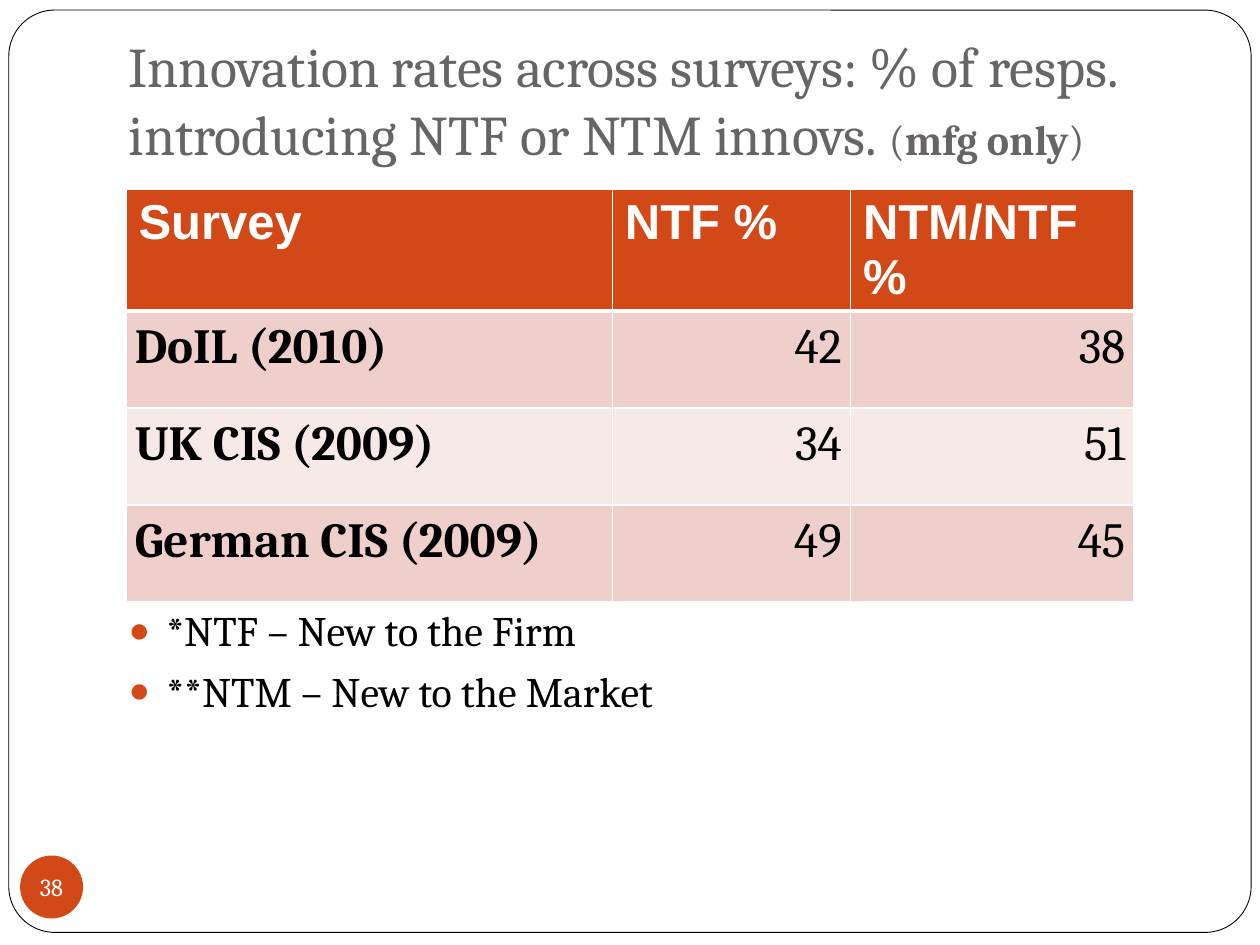
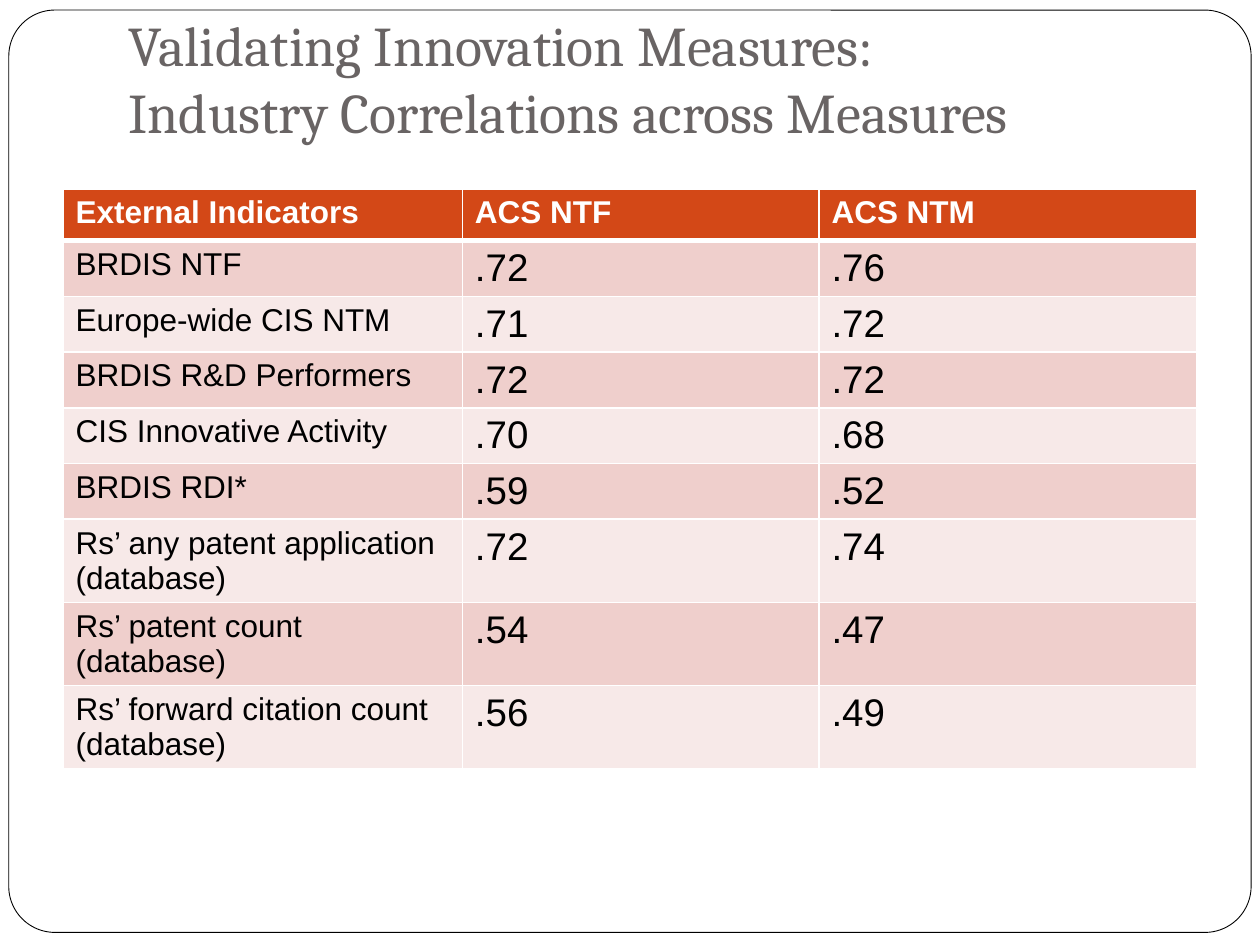
import pptx
import pptx.util
import pptx.dml.color
import pptx.enum.shapes
import pptx.enum.text
import pptx.oxml
import pptx.oxml.ns

Inches, Pt = pptx.util.Inches, pptx.util.Pt
ALIGN, ANCHOR = pptx.enum.text.PP_ALIGN, pptx.enum.text.MSO_ANCHOR
SHAPE = pptx.enum.shapes.MSO_SHAPE

COLORS = {
    "paper": "FFFFFF", "ink": "000000", "title": "696464",
    "accent": "D34817", "band_dark": "EFCFCC", "band_light": "F7E9E8",
}
SERIF, SANS = "Cambria", "Arial"
TITLE_FONT = {"name": SERIF, "size": Pt(32), "color": "title"}
FRAME_INSETS = {
    "margin_left": Inches(0.1), "margin_right": Inches(0.1),
    "margin_top": Inches(0.05), "margin_bottom": Inches(0.1),
    "vertical_anchor": ANCHOR.BOTTOM, "word_wrap": True,
    "auto_size": pptx.enum.text.MSO_AUTO_SIZE.NONE,
}


# Formatting helpers
def rgb(color):
    return pptx.dml.color.RGBColor.from_string(COLORS[color])


def apply_format(target, values):
    for attribute, value in values.items():
        if attribute == "color":
            target.color.rgb = rgb(value)
        else:
            setattr(target, attribute, value)


def place(shape, left, top, width, height):
    box = {"left": left, "top": top, "width": width, "height": height}
    apply_format(shape, {side: Inches(value) for side, value in box.items()})


def fill_solid(target, color):
    target.fill.solid()
    target.fill.fore_color.rgb = rgb(color)


def add_xml(parent, xml, index):
    namespace = pptx.oxml.ns.nsdecls("a")
    element = pptx.oxml.parse_xml(xml.replace(" ", f" {namespace} ", 1))
    parent.insert(index, element)


# Parts shared by the slides
def add_page_frame(slide):
    frame = slide.shapes.add_shape(
        SHAPE.ROUNDED_RECTANGLE, *map(Inches, (0.07, 0.08, 9.86, 7.32)))
    frame.adjustments[0] = 0.05
    frame.shadow.inherit = False
    fill_solid(frame, "paper")
    apply_format(frame.line, {"color": "ink", "width": Pt(0.5)})
    slide.shapes._spTree.insert(2, frame._element)  # behind the text


def add_title(slide, box, runs):
    title = slide.shapes.title
    place(title, *box)
    apply_format(title.text_frame, FRAME_INSETS)
    paragraph = title.text_frame.paragraphs[0]
    paragraph.alignment = ALIGN.LEFT
    for text, changes in runs:
        # A vertical tab becomes a line break inside the paragraph
        for number, line in enumerate(text.split("\v")):
            if number:
                paragraph.add_line_break()
            run = paragraph.add_run()
            run.text = line
            apply_format(run.font, TITLE_FONT | changes)


def add_page_number(slide, number):
    badge = slide.shapes.add_shape(
        SHAPE.OVAL, *map(Inches, (0.16, 6.79, 0.5, 0.5)))
    badge.shadow.inherit = False
    fill_solid(badge, "accent")
    badge.line.fill.background()
    margins = ("margin_left", "margin_right", "margin_top", "margin_bottom")
    apply_format(badge.text_frame, dict.fromkeys(margins, 0) | {
        "word_wrap": False, "vertical_anchor": ANCHOR.MIDDLE})
    paragraph = badge.text_frame.paragraphs[0]
    paragraph.text = str(number)
    paragraph.alignment = ALIGN.CENTER
    apply_format(paragraph.font,
                 {"name": SERIF, "size": Pt(14), "color": "paper"})


def add_notes_list(slide, box, notes):
    body = slide.placeholders[1]
    place(body, *box)
    body.text_frame.text = "\n".join(notes)
    for paragraph in body.text_frame.paragraphs:
        paragraph.space_before = Pt(5.8)
        apply_format(paragraph.font,
                     {"name": SERIF, "size": Pt(24), "color": "ink"})
        properties = paragraph._p.get_or_add_pPr()
        properties.set("marL", str(Inches(0.3)))
        properties.set("indent", str(-Inches(0.3)))
        bullet_parts = (
            f'<a:buClr ><a:srgbClr val="{COLORS["accent"]}"/></a:buClr>',
            '<a:buSzPct val="85000"/>',
            '<a:buFont typeface="Arial"/>',
            '<a:buChar char="●"/>',
        )
        for index, xml in enumerate(bullet_parts, start=1):
            add_xml(properties, xml, index)


# Tables
def set_borders(cell, top, bottom):
    widths = {"lnL": 1, "lnR": 1, "lnT": top, "lnB": bottom}
    for index, (edge, width) in enumerate(widths.items()):
        add_xml(cell._tc.get_or_add_tcPr(),
                f'<a:{edge} w="{Pt(width)}"><a:solidFill><a:srgbClr '
                f'val="{COLORS["paper"]}"/></a:solidFill></a:{edge}>', index)


def add_survey_table(slide, left, top, widths, row_height, rows,
                     header_size, style_body):
    table = slide.shapes.add_table(
        len(rows), len(widths), Inches(left), Inches(top),
        Inches(sum(widths)), Inches(row_height * len(rows))).table
    for column, width in zip(table.columns, widths):
        column.width = Inches(width)
    for row_index, row in enumerate(rows):
        header = row_index == 0
        band = "band_dark" if row_index % 2 else "band_light"
        for column_index, text in enumerate(row):
            cell = table.cell(row_index, column_index)
            cell.text = text
            fill_solid(cell, "accent" if header else band)
            set_borders(cell, 3 if row_index == 1 else 1, 3 if header else 1)
            if header:
                font, margins, layout = {"size": Pt(header_size), "bold": True}, {}, {}
            else:
                font, margins, layout = style_body(column_index)
            apply_format(cell, margins)
            for paragraph in cell.text_frame.paragraphs:
                apply_format(paragraph, layout)
                for run in paragraph.runs:
                    apply_format(run.font, {
                        "name": SANS, "color": "paper" if header else "ink"} | font)


def style_rate(column):
    font = {"name": SERIF, "size": Pt(28), "bold": column == 0}
    margins = {"margin_left": Inches(0.07), "margin_right": Inches(0.07),
               "margin_top": 0, "margin_bottom": 0}
    layout = {"line_spacing": 1.15,
              "alignment": ALIGN.RIGHT if column else ALIGN.LEFT}
    return font, margins, layout


def style_correlation(column):
    return {"size": Pt(22 if column else 18), "bold": False}, {}, {}


# Slides
def build_innovation_rates(prs):
    slide = prs.slides.add_slide(prs.slide_layouts[1])
    add_page_frame(slide)
    small = {"size": Pt(24)}
    add_title(slide, (0.92, 0.17, 8.83, 1.25), [
        ("Innovation rates across surveys: % of resps. "
         "introducing NTF or NTM innovs. ", {}),
        ("(", small), ("mfg only", small | {"bold": True}), (")", small)])
    add_page_number(slide, 38)
    add_survey_table(slide, 1, 1.5, (3.86, 1.89, 2.25), 0.77, [
        ("Survey", "NTF %", "NTM/NTF %"),
        ("DoIL (2010)", "42", "38"),
        ("UK CIS (2009)", "34", "51"),
        ("German CIS (2009)", "49", "45"),
    ], 28, style_rate)
    add_notes_list(slide, (0.92, 4.75, 8.5, 2.17),
                   ["*NTF – New to the Firm", "**NTM – New to the Market"])


def build_correlations(prs):
    slide = prs.slides.add_slide(prs.slide_layouts[5])
    add_page_frame(slide)
    add_title(slide, (0.92, 0, 8.5, 1.25), [
        ("Validating Innovation Measures: \v"
         "Industry Correlations across Measures", {})])
    add_survey_table(slide, 0.5, 1.5, (3.17, 2.83, 3), 0.41, [
        ("External Indicators", "ACS NTF", "ACS NTM"),
        ("BRDIS NTF", ".72", ".76"),
        ("Europe-wide CIS NTM", ".71", ".72"),
        ("BRDIS R&D Performers", ".72", ".72"),
        ("CIS Innovative Activity", ".70", ".68"),
        ("BRDIS RDI*", ".59", ".52"),
        ("Rs’ any patent application (database)", ".72", ".74"),
        ("Rs’ patent count\n(database)", ".54", ".47"),
        ("Rs’ forward citation count\n(database)", ".56", ".49"),
    ], 18, style_correlation)


def main():
    prs = pptx.Presentation()
    prs.slide_width, prs.slide_height = Inches(10), Inches(7.5)
    build_innovation_rates(prs)
    build_correlations(prs)
    prs.save("out.pptx")


if __name__ == "__main__":
    main()
